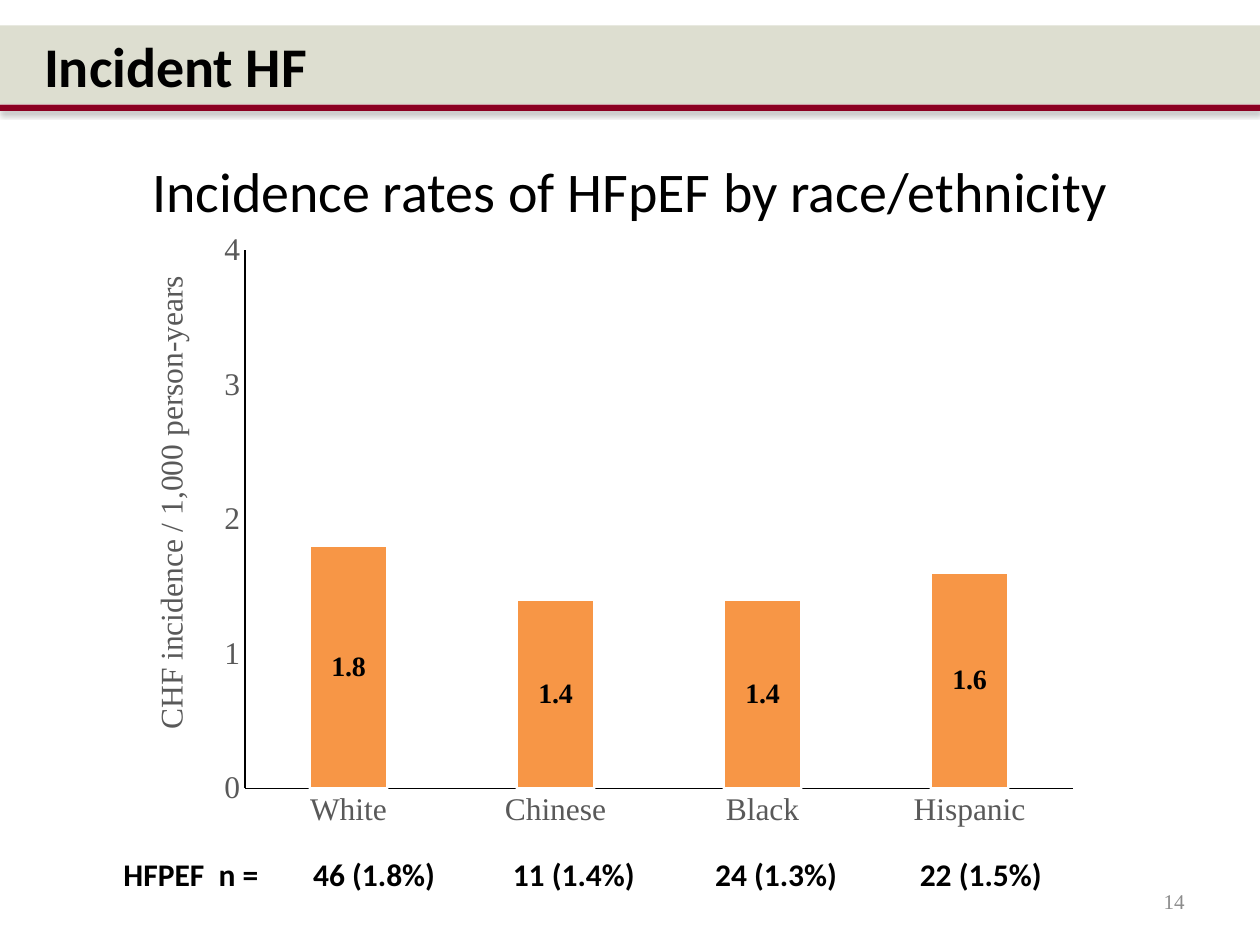
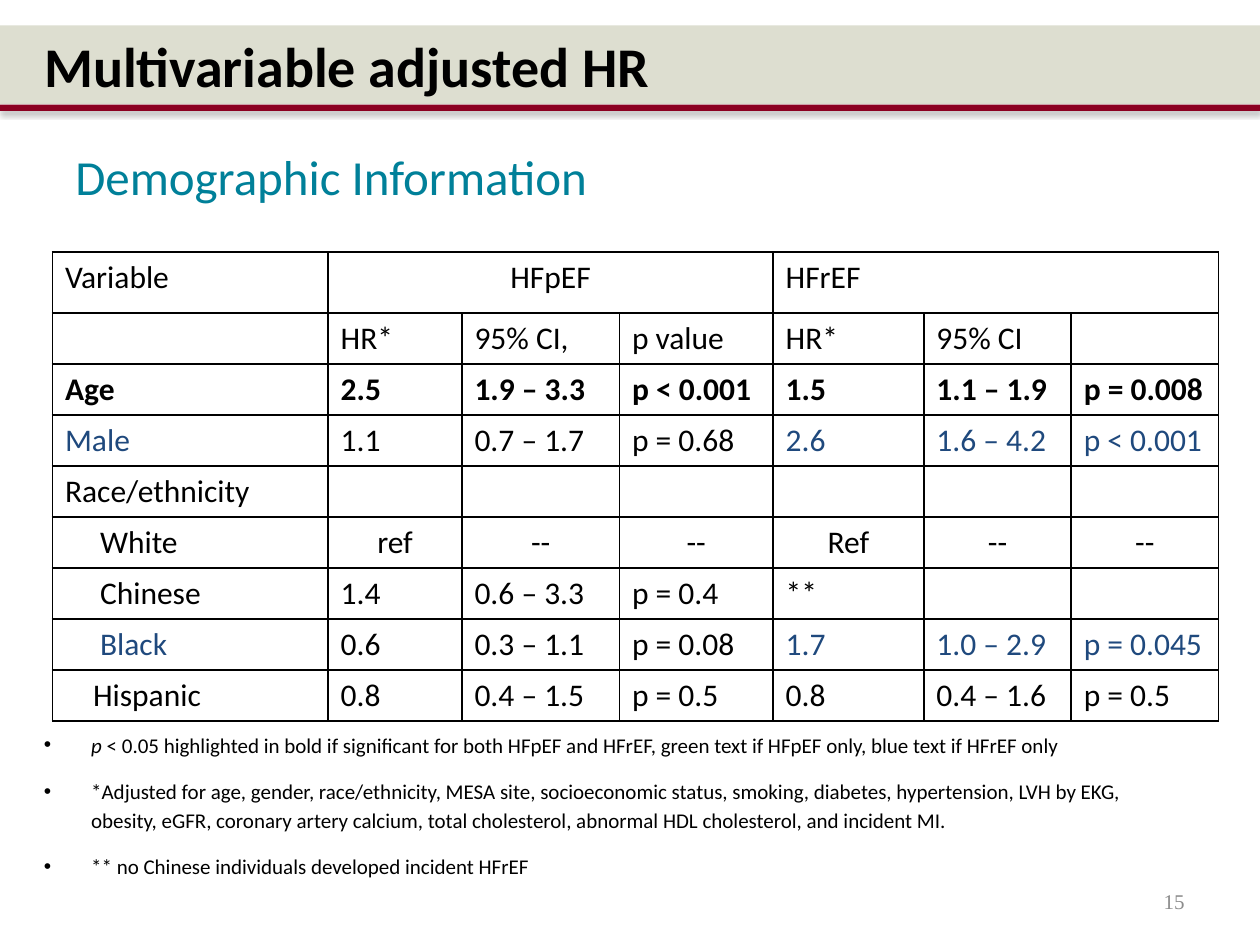
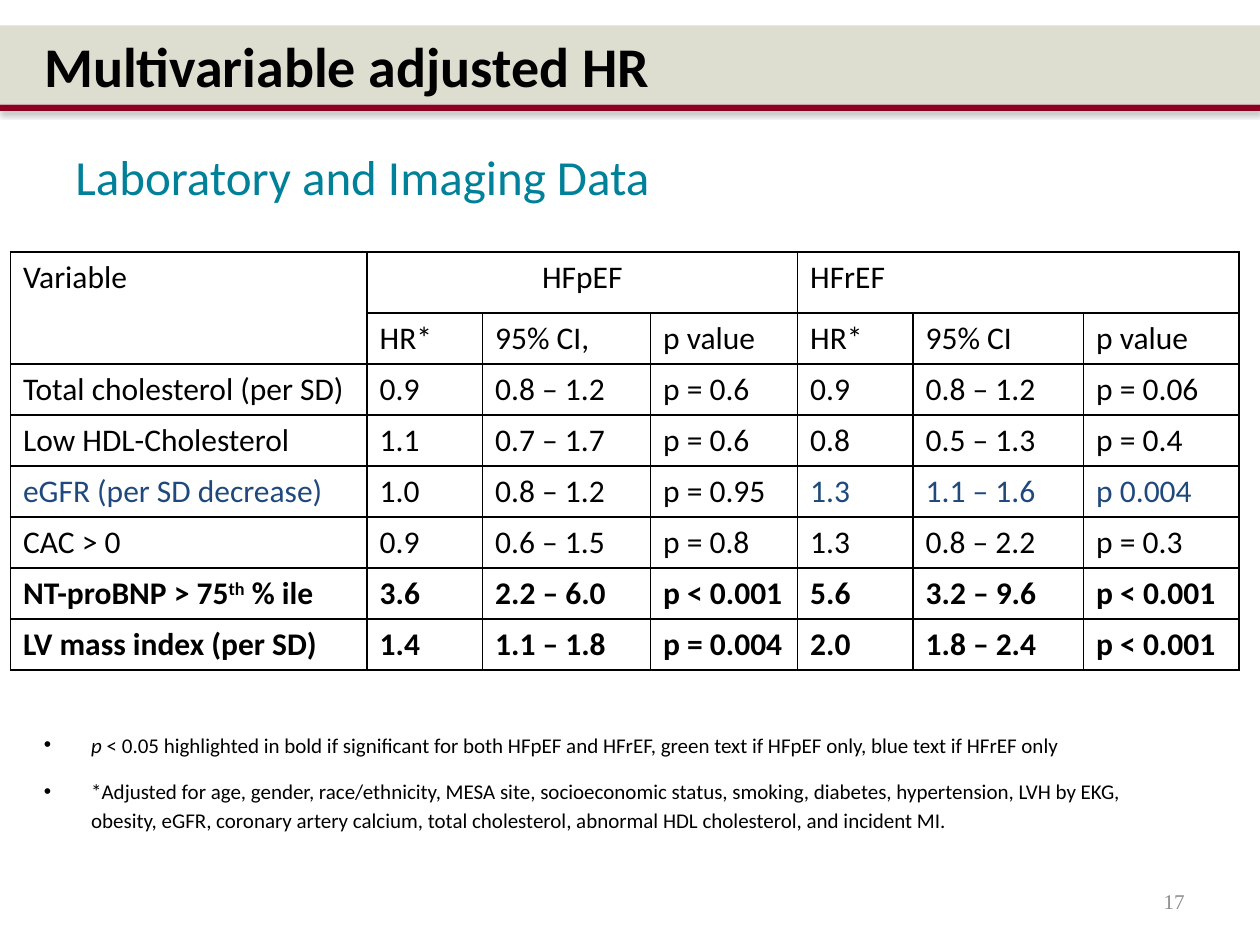
from lxml import etree
from pptx import Presentation
from pptx.chart.data import CategoryChartData
from pptx.dml.color import RGBColor
from pptx.enum import chart as ch, shapes, text as tx
from pptx.oxml.ns import qn
from pptx.util import Pt

BLACK, BLUE, TEAL, GREY = "000000", "1F497D", "008099", "595959"
BAND, RULE, ORANGE, WHITE, NUMBER = "DDDED0", "8B0021", "F79646", "FFFFFF", "8C8C8C"
SANS, SERIF = "Calibri", "Times New Roman"
LEFT, CENTER, RIGHT = tx.PP_ALIGN.LEFT, tx.PP_ALIGN.CENTER, tx.PP_ALIGN.RIGHT
TOP, MIDDLE = tx.MSO_ANCHOR.TOP, tx.MSO_ANCHOR.MIDDLE

COUNTS = ["HFPEF  n =", "46 (1.8%)", "11 (1.4%)", "24 (1.3%)", "22 (1.5%)"]
DEMOGRAPHICS = [
    "Variable|HFpEF|||HFrEF||",
    "|HR*|95% CI,|p value|HR*|95% CI|",
    "Age|2.5|1.9 – 3.3|p < 0.001|1.5|1.1 – 1.9|p = 0.008",
    "Male|1.1|0.7 – 1.7|p = 0.68|2.6|1.6 – 4.2|p < 0.001",
    "Race/ethnicity||||||",
    "White|ref|--|--|Ref|--|--",
    "Chinese|1.4|0.6 – 3.3|p = 0.4|**||",
    "Black|0.6|0.3 – 1.1|p = 0.08|1.7|1.0 – 2.9|p = 0.045",
    "Hispanic|0.8|0.4 – 1.5|p = 0.5|0.8|0.4 – 1.6|p = 0.5",
]
LABORATORY = [
    "Variable|HFpEF|||HFrEF||",
    "|HR*|95% CI,|p value|HR*|95% CI|p value",
    "Total cholesterol (per SD)|0.9|0.8 – 1.2|p = 0.6|0.9|0.8 – 1.2|p = 0.06",
    "Low HDL-Cholesterol|1.1|0.7 – 1.7|p = 0.6|0.8|0.5 – 1.3|p = 0.4",
    "eGFR (per SD decrease)|1.0|0.8 – 1.2|p = 0.95|1.3|1.1 – 1.6|p 0.004",
    "CAC > 0|0.9|0.6 – 1.5|p = 0.8|1.3|0.8 – 2.2|p = 0.3",
    "NT-proBNP > 75^th^ % ile|3.6|2.2 – 6.0|p < 0.001|5.6|3.2 – 9.6|p < 0.001",
    "LV mass index (per SD)|1.4|1.1 – 1.8|p = 0.004|2.0|1.8 – 2.4|p < 0.001",
]
NOTES = [
    ("p", " < 0.05 highlighted in bold if significant for both HFpEF and HFrEF, "
     "green text if HFpEF only, blue text if HFrEF only"),
    ("", "*Adjusted for age, gender, race/ethnicity, MESA site, socioeconomic status, "
     "smoking, diabetes, hypertension, LVH by EKG, obesity, eGFR, coronary artery calcium, "
     "total cholesterol, abnormal HDL cholesterol, and incident MI."),
    ("", "** no Chinese individuals developed incident HFrEF"),
]


def rgb(value):
    """Turn a hex string into a colour."""
    return RGBColor.from_string(value)


def tag(parent, name, **attrs):
    """Append an XML element with attributes."""
    return etree.SubElement(parent, qn(name), {k: str(v) for k, v in attrs.items()})


def set_font(font, size, color=BLACK, name=SANS, bold=False, italic=False):
    """Format a font."""
    font.size, font.name, font.bold, font.italic = Pt(size), name, bold, italic
    font.color.rgb = rgb(color)


def write(p, content, align=LEFT, **fmt):
    """Add text to a paragraph, with superscripts between carets."""
    p.alignment = align
    for i, part in enumerate(content.split("^")):
        r = p.add_run()
        r.text = part
        set_font(r.font, **fmt)
        if i % 2:
            r.font._element.set("baseline", "30000")


def add_box(s, x, y, w, h, anchor=TOP):
    """Add an empty wrapping text box and return its frame."""
    tf = s.shapes.add_textbox(Pt(x), Pt(y), Pt(w), Pt(h)).text_frame
    tf.word_wrap, tf.vertical_anchor = True, anchor
    return tf


def add_band(s, y, h, color):
    """Add a full-width strip behind the title."""
    sp = s.shapes.add_shape(shapes.MSO_SHAPE.RECTANGLE, 0, Pt(y), Pt(720), Pt(h))
    sp.shadow.inherit = False
    sp.fill.solid()
    sp.fill.fore_color.rgb = rgb(color)
    sp.line.fill.background()
    s.shapes.title.element.addprevious(sp.element)
    return sp


def add_slide(prs, title, number):
    """Add a slide with its title, bands and number."""
    s = prs.slides.add_slide(prs.slide_layouts[5])
    sp = s.shapes.title
    sp.left, sp.top, sp.width, sp.height = Pt(18), Pt(10), Pt(612), Pt(54)
    sp.text_frame.vertical_anchor = MIDDLE
    write(sp.text_frame.paragraphs[0], title, size=32, bold=True)
    add_band(s, 14.6, 45, BAND)
    rule = add_band(s, 59.8, 3.6, RULE)
    effects = rule.element.spPr.find(qn("a:effectLst"))
    shadow = tag(effects, "a:outerShdw", blurRad=Pt(3.1), dist=Pt(1.8), dir=5400000, rotWithShape=0)
    tag(tag(shadow, "a:srgbClr", val=BLACK), "a:alpha", val=35000)
    tf = add_box(s, 516, 500.4, 168, 29, MIDDLE)
    write(tf.paragraphs[0], number, RIGHT, size=12, color=NUMBER, name=SERIF)
    return s


def add_subtitle(s, content):
    """Add the teal line above a table."""
    write(add_box(s, 36, 80, 648, 60).paragraphs[0], content, size=28, color=TEAL)


def place(element, **fractions):
    """Give a chart part a manual layout in fractions of the chart."""
    old = element.find(qn("c:layout"))
    layout = etree.Element(qn("c:layout"))
    manual = tag(layout, "c:manualLayout")
    if "w" in fractions:
        tag(manual, "c:layoutTarget", val="inner")
    for name in ("xMode", "yMode"):
        tag(manual, "c:" + name, val="edge")
    for name, value in fractions.items():
        tag(manual, "c:" + name, val=value)
    if old is not None:
        element.replace(old, layout)
    elif element.find(qn("c:tx")) is not None:
        element.find(qn("c:tx")).addnext(layout)
    else:
        element.insert(0, layout)


def add_rates(s):
    """Add the column chart of incidence rates."""
    data = CategoryChartData()
    data.categories = ["White", "Chinese", "Black", "Hispanic"]
    data.add_series("Series 1", [1.8, 1.4, 1.4, 1.6])
    chart = s.shapes.add_chart(ch.XL_CHART_TYPE.COLUMN_STACKED, Pt(77.8), Pt(126),
                               Pt(545.8), Pt(354.2), data).chart
    chart.has_title = chart.has_legend = False
    set_font(chart.font, 10, name=SERIF)
    for axis in (chart.category_axis, chart.value_axis):
        axis.major_tick_mark = axis.minor_tick_mark = ch.XL_TICK_MARK.NONE
        axis.has_major_gridlines = False
        set_font(axis.tick_labels.font, 18, GREY, SERIF)
        axis.format.line.color.rgb = rgb(BLACK)
        axis.format.line.width = Pt(0.75)
    axis.minimum_scale, axis.maximum_scale, axis.major_unit = 0, 4, 1
    axis.tick_labels.number_format = "#,##0"
    axis.tick_labels.number_format_is_linked = False
    title = axis.axis_title
    write(title.text_frame.paragraphs[0], "CHF incidence / 1,000 person-years", CENTER,
          size=18, color=GREY, name=SERIF)
    place(title._element, x=0.01, y=0.08)
    place(chart._chartSpace.chart.plotArea, x=0.114, y=0.048, w=0.867, h=0.868)
    plot = chart.plots[0]
    plot.gap_width, plot.overlap, plot.vary_by_categories = 166, 100, False
    bars = plot.series[0].format
    bars.fill.solid()
    bars.fill.fore_color.rgb = rgb(ORANGE)
    bars.line.color.rgb = rgb(WHITE)
    bars.line.width = Pt(1.5)
    labels = plot.series[0].data_labels
    labels.show_value = True
    labels.number_format, labels.number_format_is_linked = "#,##0.0", False
    labels.position = ch.XL_LABEL_POSITION.CENTER
    set_font(labels.font, 16, name=SERIF, bold=True)


def add_grid(s, x, y, widths, heights):
    """Add an unfilled table with the given columns and rows."""
    table = s.shapes.add_table(len(heights), len(widths), Pt(x), Pt(y),
                               Pt(sum(widths)), Pt(sum(heights))).table
    table.first_row = table.horz_banding = False
    for column, width in zip(table.columns, widths):
        column.width = Pt(width)
    for row, height in zip(table.rows, heights):
        row.height = Pt(height)
    for cell in table.iter_cells():
        cell.fill.background()
    return table


def add_border(cell):
    """Draw a black line on each side of a cell."""
    tc_pr = cell._tc.get_or_add_tcPr()
    for i, side in enumerate("LRTB"):
        line = tag(tc_pr, "a:ln" + side, w=Pt(1))
        tag(tag(line, "a:solidFill"), "a:srgbClr", val=BLACK)
        tc_pr.insert(i, line)


def add_ratios(s, x, widths, lines, bold=(), blue=(), indents=None):
    """Add a bordered table of hazard ratios for both outcomes."""
    table = add_grid(s, x, 144, widths, [35] + [29.15] * (len(lines) - 1))
    for cell in table.iter_cells():
        add_border(cell)
    for first in (1, 4):
        table.cell(0, first).merge(table.cell(0, first + 2))
    for i, line in enumerate(lines):
        for j, value in enumerate(line.split("|")):
            if value:
                color = BLUE if i in blue and j in (0, 4, 5, 6) else BLACK
                align = CENTER if value in ("HFpEF", "ref", "Ref", "--") else LEFT
                write(table.cell(i, j).text_frame.paragraphs[0], value, align,
                      size=18, color=color, bold=i in bold)
    for i, indent in (indents or {}).items():
        table.cell(i, 0).margin_left = Pt(7.2 + indent)
    return table


def add_notes(s, notes):
    """Add the bulleted footnotes."""
    tf = add_box(s, 18, 412.6, 660, 31 * len(notes))
    for i, (symbol, note) in enumerate(notes):
        p = tf.add_paragraph() if i else tf.paragraphs[0]
        p.line_spacing, p.space_after = 1.15, Pt(10)
        if symbol:
            write(p, symbol, size=12, italic=True)
        write(p, note, size=12)
        p_pr = p._p.get_or_add_pPr()
        p_pr.set("marL", str(Pt(27)))
        p_pr.set("indent", str(Pt(-27)))
        tag(p_pr, "a:buFont", typeface="Arial")
        tag(p_pr, "a:buChar", char="•")


def main():
    """Build the three slides."""
    prs = Presentation()
    prs.slide_width, prs.slide_height = Pt(720), Pt(540)

    s = add_slide(prs, "Incident HF", "14")
    p = add_box(s, 49.7, 59, 620.6, 104.4, MIDDLE).paragraphs[0]
    p.line_spacing = 0.9
    write(p, "Incidence rates of HFpEF by race/ethnicity", CENTER, size=32)
    add_rates(s)
    table = add_grid(s, 49, 486, [105.8, 118, 110.2, 121, 113], [29])
    for j, count in enumerate(COUNTS):
        write(table.cell(0, j).text_frame.paragraphs[0], count, CENTER if j else RIGHT,
              size=18, bold=True)

    s = add_slide(prs, "Multivariable adjusted HR", "15")
    add_ratios(s, 30, [157.5, 76.5, 90, 87.8, 86.2, 84.2, 84.2], DEMOGRAPHICS,
               bold=[2], blue=[3, 7], indents={5: 20, 6: 20, 7: 20, 8: 16})
    add_subtitle(s, "Demographic Information")
    add_notes(s, NOTES)

    s = add_slide(prs, "Multivariable adjusted HR", "17")
    table = add_ratios(s, 6, [203.8, 66, 96, 84, 66, 97.5, 88.7], LABORATORY,
                       bold=[6, 7], blue=[4])
    table.cell(0, 0).merge(table.cell(1, 0))
    add_subtitle(s, "Laboratory and Imaging Data")
    add_notes(s, NOTES[:2])

    prs.save("out.pptx")


if __name__ == "__main__":
    main()
